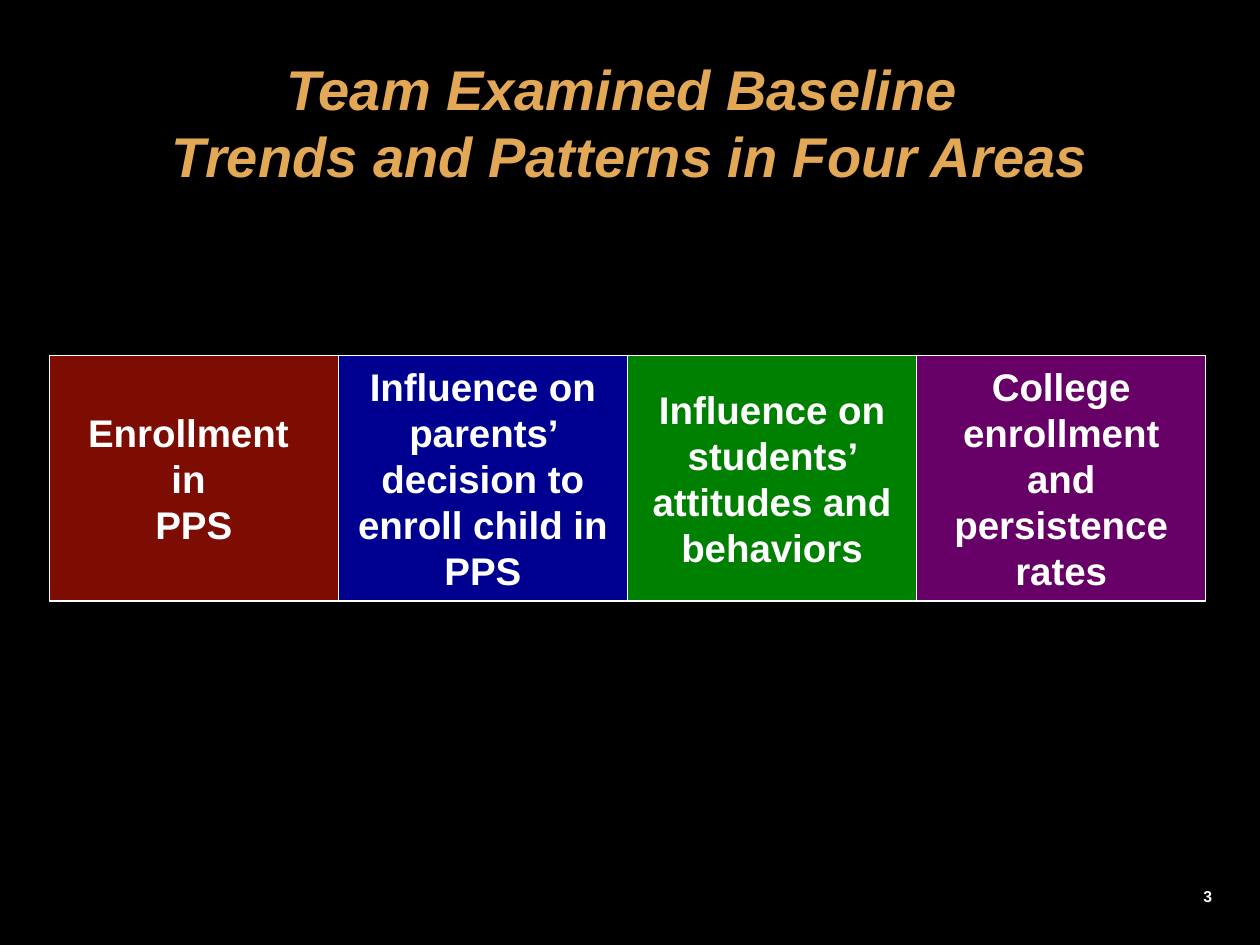
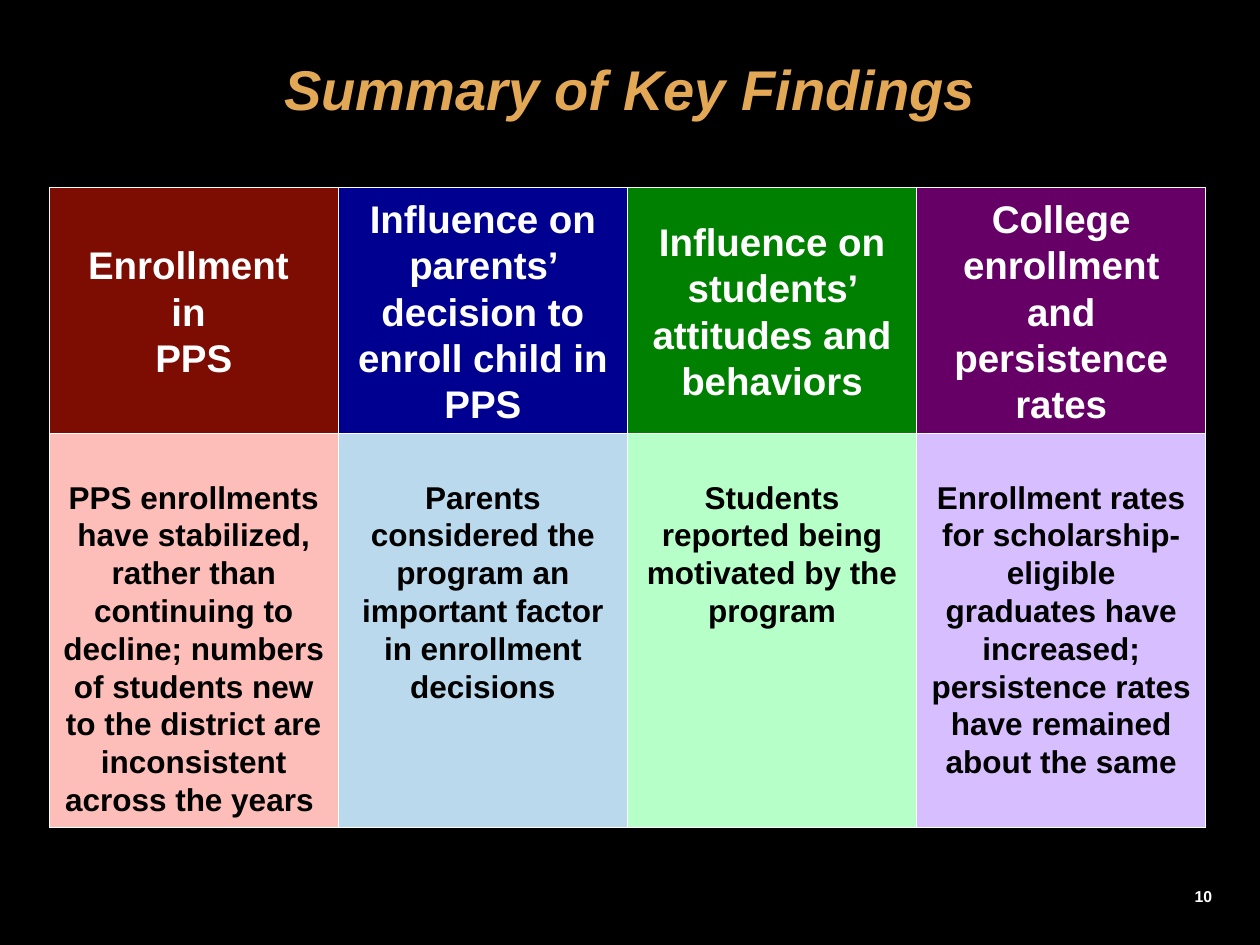
from typing import NamedTuple

from pptx import Presentation
from pptx.dml.color import RGBColor
from pptx.enum import shapes, text
from pptx.util import Inches, Pt

BLACK = RGBColor(0x00, 0x00, 0x00)
WHITE = RGBColor(0xFF, 0xFF, 0xFF)
GOLD = RGBColor(0xE2, 0xA8, 0x56)
MAROON = RGBColor(0x7D, 0x0C, 0x03)
NAVY = RGBColor(0x00, 0x00, 0x90)
GREEN = RGBColor(0x00, 0x80, 0x00)
PURPLE = RGBColor(0x66, 0x00, 0x66)
PINK = RGBColor(0xFD, 0xBD, 0xB8)
SKY = RGBColor(0xBB, 0xD9, 0xED)
MINT = RGBColor(0xB7, 0xFF, 0xC8)
LILAC = RGBColor(0xD7, 0xBF, 0xFF)

FONT = "Arial"
LEFT, RIGHT = 0.39, 9.57
HEAD_H, BODY_H = 1.95, 3.13


class Area(NamedTuple):
    head: str
    dark: RGBColor
    finding: str
    light: RGBColor


AREAS = [
    Area("Enrollment \nin \nPPS", MAROON,
         "PPS enrollments have stabilized, rather than continuing to decline; "
         "numbers of students new to the district are inconsistent across the years ", PINK),
    Area("Influence on parents’ decision to enroll child in PPS", NAVY,
         "Parents considered the program an important factor in enrollment decisions", SKY),
    Area("Influence on students’ attitudes and behaviors", GREEN,
         "Students reported being motivated by the program", MINT),
    Area("College enrollment and persistence rates", PURPLE,
         "Enrollment rates for scholarship-eligible graduates have increased; "
         "persistence rates have remained about the same", LILAC),
]
WIDTH = (RIGHT - LEFT) / len(AREAS)


def write(shape, words: str, size: float, color: RGBColor, *, italic: bool = False,
          align=text.PP_ALIGN.CENTER, anchor=text.MSO_ANCHOR.TOP,
          side: float = 0, top: float = 0, bottom: float = 0) -> None:
    """Fill a shape with one bold paragraph; newlines become line breaks."""
    frame = shape.text_frame
    frame.word_wrap = True
    frame.vertical_anchor = anchor
    frame.margin_left = frame.margin_right = Inches(side)
    frame.margin_top, frame.margin_bottom = Inches(top), Inches(bottom)
    para = frame.paragraphs[0]
    para.text = words
    para.alignment = align
    for run in para.runs:
        font = run.font
        font.name, font.size, font.bold, font.italic = FONT, Pt(size), True, italic
        font.color.rgb = color


def add_cell(slide, col: int, top: float, height: float, fill: RGBColor):
    cell = slide.shapes.add_shape(
        shapes.MSO_SHAPE.RECTANGLE, Inches(LEFT + col * WIDTH), Inches(top),
        Inches(WIDTH), Inches(height))
    cell.shadow.inherit = False
    cell.fill.solid()
    cell.fill.fore_color.rgb = fill
    cell.line.color.rgb = WHITE
    cell.line.width = Pt(0.75)
    return cell


def add_heads(slide, top: float) -> None:
    for col, area in enumerate(AREAS):
        write(add_cell(slide, col, top, HEAD_H, area.dark), area.head, 22, WHITE,
              anchor=text.MSO_ANCHOR.MIDDLE, side=0.1, top=0.05, bottom=0.05)


def add_findings(slide, top: float) -> None:
    for col, area in enumerate(AREAS):
        write(add_cell(slide, col, top, BODY_H, area.light), area.finding, 18, BLACK,
              side=0.1, top=0.35, bottom=0.05)


def add_slide(deck, title: str, number: int):
    """Start a black slide with its title and page number."""
    slide = deck.slides.add_slide(deck.slide_layouts[6])
    slide.background.fill.solid()
    slide.background.fill.fore_color.rgb = BLACK
    box = slide.shapes.add_textbox(Inches(0), Inches(0.43), Inches(10), Inches(0.67))
    write(box, title, 32, GOLD, italic=True)
    page = slide.shapes.add_textbox(Inches(9.2), Inches(7), Inches(0.42), Inches(0.23))
    write(page, str(number), 9, WHITE, align=text.PP_ALIGN.RIGHT, top=0.04)
    return slide


def main() -> None:
    deck = Presentation()
    deck.slide_width, deck.slide_height = Inches(10), Inches(7.5)

    areas = add_slide(deck, "Team Examined Baseline \nTrends and Patterns in Four Areas", 3)
    add_heads(areas, 2.82)

    summary = add_slide(deck, "Summary of Key Findings", 10)
    add_heads(summary, 1.49)
    add_findings(summary, 1.49 + HEAD_H)

    deck.save("out.pptx")


if __name__ == "__main__":
    main()
